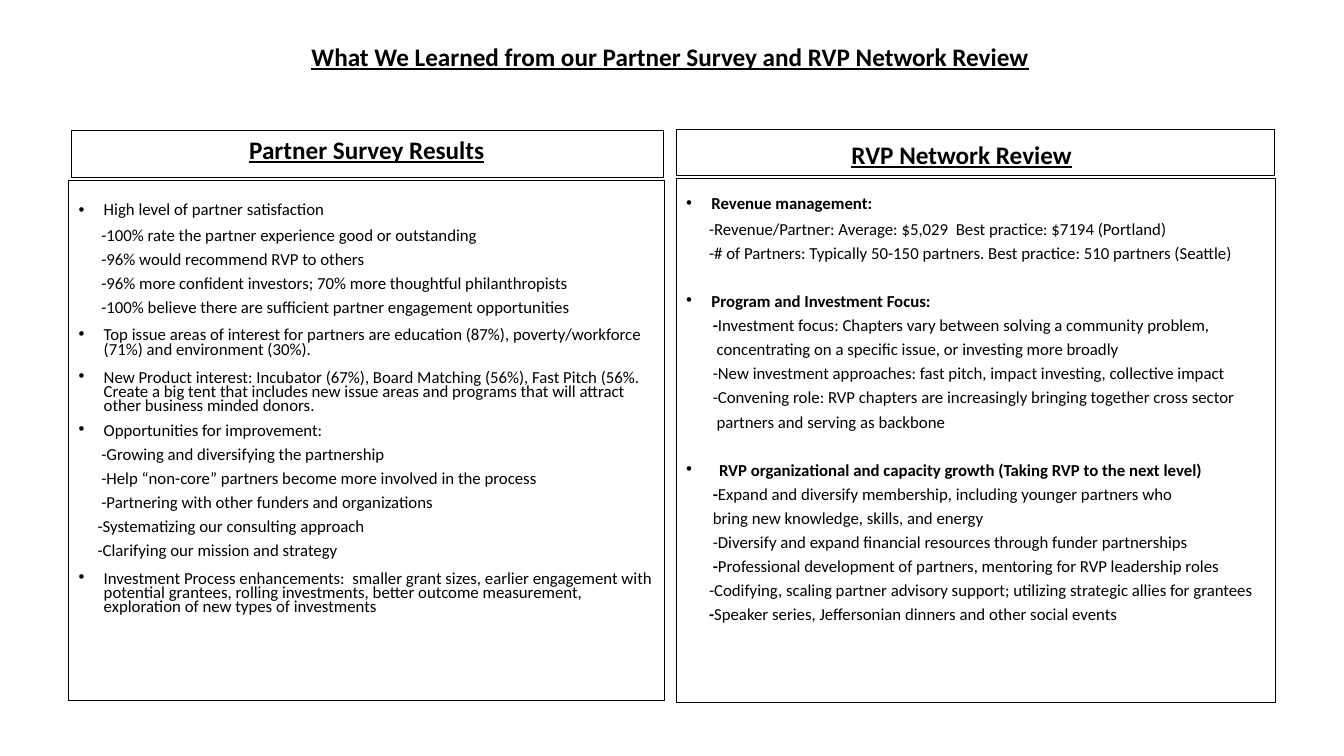
from dataclasses import dataclass

from lxml.etree import SubElement
from pptx import Presentation
from pptx.dml.color import RGBColor
from pptx.enum.shapes import MSO_SHAPE as Kind
from pptx.enum.text import MSO_ANCHOR as Anchor, PP_ALIGN as Align
from pptx.oxml.ns import qn
from pptx.util import Pt

BLACK = RGBColor(0, 0, 0)
FONT = "Calibri"
HANG = 18
SPACE = 2.71
GAP = 10
BREAK = 27.3


@dataclass
class Box:
    left: float
    top: float
    width: float
    height: float
    line: float = 0
    inset: float = 3.6


@dataclass
class Item:
    text: str
    head: str = ""
    left: float = 6 * SPACE
    dot: bool = False
    ratio: float = 0.5
    gap: float = GAP


@dataclass
class Panel:
    name: str
    title: Box
    bar: Box
    body: Box
    items: list[Item]


def point(text: str, ratio: float = 0.7) -> Item:
    return Item(text, left=HANG, dot=True, ratio=ratio)


def topic(head: str, left: float = HANG, gap: float = GAP) -> Item:
    return Item("", head, left, True, gap=gap)


def sub(text: str, count: int = 6, head: str = "") -> Item:
    return Item(text, head, count * SPACE)


SURVEY = [
    point("High level of partner satisfaction"),
    sub("-100% rate the partner experience good or outstanding"),
    sub("-96% would recommend RVP to others"),
    sub("-96% more confident investors; 70% more thoughtful philanthropists"),
    sub("-100% believe there are sufficient partner engagement opportunities"),
    point("Top issue areas of interest for partners are education (87%), "
          "poverty/workforce (71%) and environment (30%)."),
    point("New Product interest: Incubator (67%), Board Matching (56%), Fast Pitch (56%. "
          "Create a big tent that includes new issue areas and programs that will attract "
          "other business minded donors."),
    point("Opportunities for improvement:", 0.5),
    sub("-Growing and diversifying the partnership"),
    sub("-Help “non-core” partners become more involved in the process"),
    sub("-Partnering with other funders and organizations"),
    sub("-Systematizing our consulting approach", 5),
    sub("-Clarifying our mission and strategy", 5),
    point("Investment Process enhancements:  smaller grant sizes, earlier engagement with "
          "potential grantees, rolling investments, better outcome measurement, "
          "exploration of new types of investments"),
]

REVIEW = [
    topic("Revenue management:"),
    sub("-Revenue/Partner: Average: $5,029  Best practice: $7194 (Portland)"),
    sub("-# of Partners: Typically 50-150 partners. Best practice: 510 partners (Seattle)"),
    topic("Program and Investment Focus:", gap=BREAK),
    sub("Investment focus: Chapters vary between solving a community problem,", 7, "-"),
    sub("concentrating on a specific issue, or investing more broadly", 8),
    sub("-New investment approaches: fast pitch, impact investing, collective impact", 7),
    sub("-Convening role: RVP chapters are increasingly bringing together cross sector", 7),
    sub("partners and serving as backbone", 8),
    topic("RVP organizational and capacity growth (Taking RVP to the next level)",
          HANG + 2 * SPACE, BREAK),
    sub("Expand and diversify membership, including younger partners who", 7, "-"),
    sub("bring new knowledge, skills, and energy", 7),
    sub("-Diversify and expand financial resources through funder partnerships", 7),
    sub("Professional development of partners, mentoring for RVP leadership roles", 7, "-"),
    sub("-Codifying, scaling partner advisory support; utilizing strategic allies for grantees"),
    sub("Speaker series, Jeffersonian dinners and other social events", 6, "-"),
]

HEAD = Box(66.2, 28.8, 825.1, 42.5, inset=0.5)
PANELS = [
    Panel("Partner Survey Results", Box(69.8, 92.2, 384.5, 28.8),
          Box(51.1, 92.9, 422.6, 33.8, 0.5), Box(49, 128.9, 425.5, 371.5, 0.75, 13.4), SURVEY),
    Panel("RVP Network Review", Box(532.8, 95.8, 308.2, 28.8),
          Box(483.1, 92.2, 427, 33.1, 0.5), Box(483.1, 127.4, 427.7, 374.4, 0.75, 10.5), REVIEW),
]


def frame(slide, box: Box):
    area = [Pt(n) for n in (box.left, box.top, box.width, box.height)]
    if box.line:
        shape = slide.shapes.add_shape(Kind.RECTANGLE, *area)
        shape.shadow.inherit = False
        shape.fill.background()
        shape.line.color.rgb = BLACK
        shape.line.width = Pt(box.line)
    else:
        shape = slide.shapes.add_textbox(*area)
    text = shape.text_frame
    text.word_wrap = True
    text.vertical_anchor = Anchor.TOP
    text.margin_left = text.margin_right = Pt(7.2)
    text.margin_top, text.margin_bottom = Pt(box.inset), Pt(3.6)
    return text


def write(para, text: str, *, size: float = 12, bold: bool = False,
          line: bool = False, align: Align = Align.LEFT) -> None:
    para.alignment = align
    run = para.add_run()
    run.text = text
    font = run.font
    font.name, font.size, font.bold, font.underline = FONT, Pt(size), bold, line
    font.color.rgb = BLACK


def label(slide, box: Box, text: str) -> None:
    para = frame(slide, box).paragraphs[0]
    write(para, text, size=18, bold=True, line=True, align=Align.CENTER)


def fill(slide, box: Box, items: list[Item]) -> None:
    text = frame(slide, box)
    for rank, item in enumerate(items):
        para = text.add_paragraph() if rank else text.paragraphs[0]
        para.line_spacing = item.ratio if rank else 1.0
        para.space_before = Pt(item.gap if rank else 0)
        props = para._p.get_or_add_pPr()
        props.set("marL", str(Pt(item.left)))
        props.set("indent", str(-Pt(item.left) if item.dot else 0))
        if item.dot:
            SubElement(props, qn("a:buFont")).set("typeface", "Arial")
            SubElement(props, qn("a:buChar")).set("char", "•")
        else:
            SubElement(props, qn("a:buNone"))
        for part, bold in ((item.head, True), (item.text, False)):
            if part:
                write(para, part, bold=bold)


def main() -> None:
    deck = Presentation()
    deck.slide_width, deck.slide_height = Pt(960), Pt(540)
    slide = deck.slides.add_slide(deck.slide_layouts[6])
    label(slide, HEAD, "What We Learned from our Partner Survey and RVP Network Review")
    for panel in PANELS:
        fill(slide, panel.body, panel.items)
        frame(slide, panel.bar)
        label(slide, panel.title, panel.name)
    deck.save("out.pptx")


if __name__ == "__main__":
    main()
